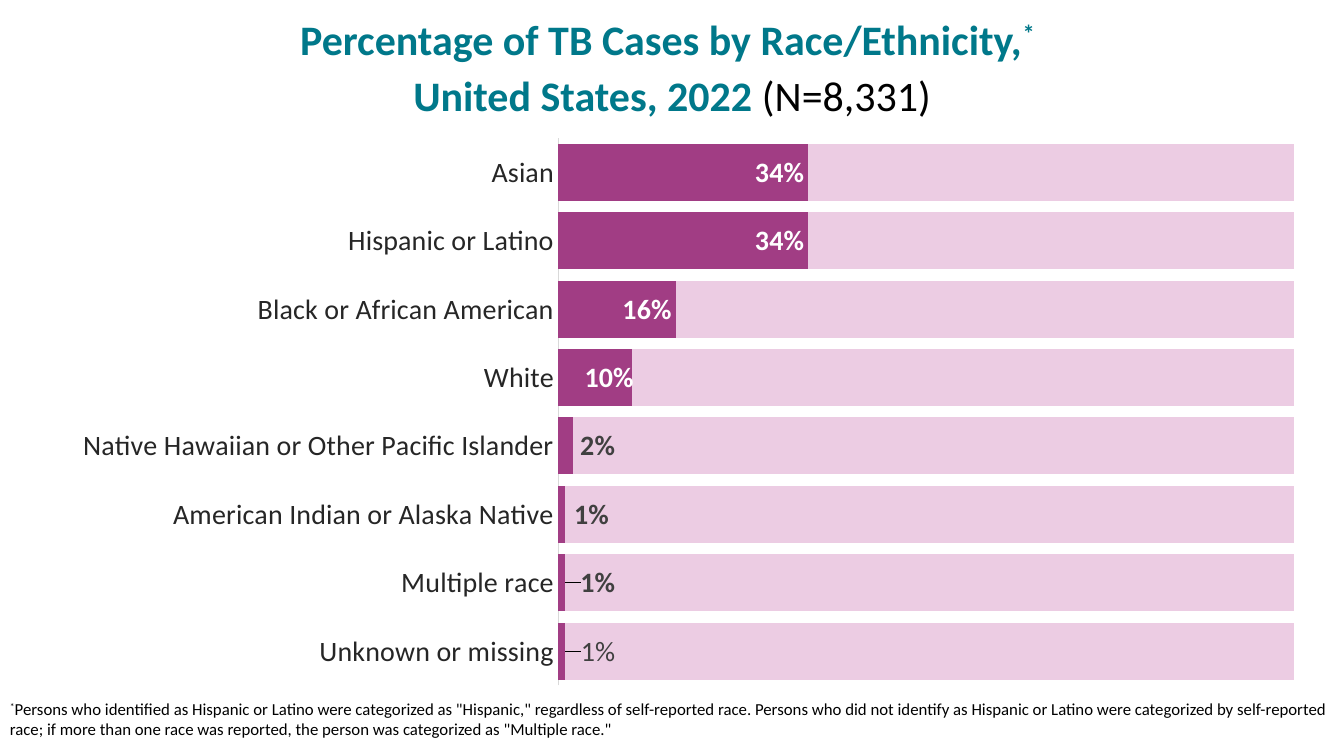
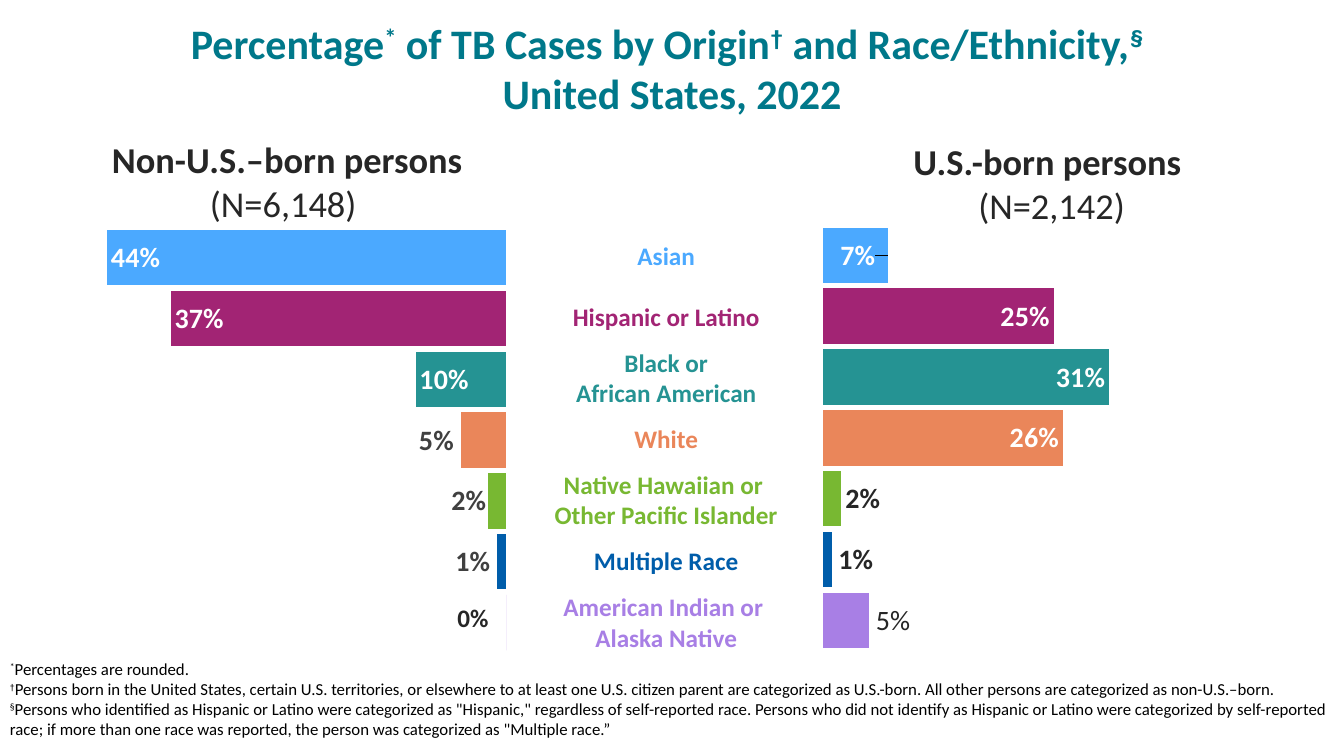
from itertools import groupby

from pptx import Presentation
from pptx.chart.data import CategoryChartData
from pptx.dml.color import RGBColor
from pptx.enum.chart import XL_CHART_TYPE, XL_LABEL_POSITION, XL_TICK_LABEL_POSITION, XL_TICK_MARK
from pptx.enum.text import MSO_ANCHOR, MSO_AUTO_SIZE, PP_ALIGN
from pptx.oxml import parse_xml
from pptx.oxml.ns import nsdecls
from pptx.util import Cm, Pt

TEAL = RGBColor(0x00, 0x78, 0x8A)
BLACK = RGBColor(0, 0, 0)
WHITE = RGBColor(255, 255, 255)
INK = RGBColor(0x26, 0x26, 0x26)
GRAY = RGBColor(0x40, 0x40, 0x40)
RULE = RGBColor(0xD9, 0xD9, 0xD9)
PLUM = RGBColor(0xA1, 0x3D, 0x84)
PINK = RGBColor(0xEC, 0xCC, 0xE3)

RACES = [
    ("Asian", RGBColor(0x4B, 0xA9, 0xFF)),
    ("Hispanic or Latino", RGBColor(0xA2, 0x24, 0x74)),
    ("Black or\nAfrican American", RGBColor(0x25, 0x93, 0x93)),
    ("White", RGBColor(0xEA, 0x86, 0x5A)),
    ("Native Hawaiian or \nOther Pacific Islander", RGBColor(0x78, 0xB8, 0x32)),
    ("Multiple Race", RGBColor(0x00, 0x5D, 0xAA)),
    ("American Indian or \nAlaska Native", RGBColor(0xA8, 0x7F, 0xE5)),
]
TITLE = {"name": "Calibri", "size": Pt(30), "bold": True}
HEAD = {"name": "Calibri", "size": Pt(26), "bold": True}
LABEL = {"name": "Calibri", "size": Pt(20), "bold": True}
RACE = {"name": "Calibri", "size": Pt(18), "bold": True}
NOTE = {"name": "Calibri", "size": Pt(12), "bold": False}
AXIS = {"name": "Calibri", "size": Pt(20), "bold": False}
BASE = {"name": "Calibri", "size": Pt(10)}
MARKS = "*†§"
PERSONS = (
    'Persons who identified as Hispanic or Latino were categorized as "Hispanic," '
    "regardless of self-reported race. Persons who did not identify as Hispanic or Latino "
    "were categorized by self-reported race; if more than one race was reported, "
    'the person was categorized as "Multiple race.'
)


def apply(item, form):
    for key, value in form.items():
        setattr(item, key, value)


def style(font, form, color):
    apply(font, form)
    font.color.rgb = color


def write(para, text, form, color, karla="†§"):
    for raised, chars in groupby(text, lambda c: c in MARKS):
        part = "".join(chars)
        run = para.add_run()
        run.text = part
        style(run.font, form, color)
        if raised:
            run.font._element.set("baseline", "30000")
            if part in karla:
                run.font.name = "Karla"


def add_title(slide, top, lines, gap=None):
    title = slide.shapes.title
    apply(title, {"left": Cm(1.7), "top": Cm(top), "width": Cm(30.48), "height": Cm(2.69)})
    frame = title.text_frame
    apply(frame, {"word_wrap": True, "auto_size": MSO_AUTO_SIZE.NONE, "vertical_anchor": MSO_ANCHOR.BOTTOM})
    para = frame.paragraphs[0]
    apply(para, {"alignment": PP_ALIGN.CENTER, "line_spacing": gap})
    for row, text in enumerate(lines):
        if row:
            para.add_line_break()
        write(para, text, TITLE, TEAL)
    return para


def add_text(slide, box, lines, align=PP_ALIGN.LEFT, anchor=MSO_ANCHOR.TOP, wrap=True):
    frame = slide.shapes.add_textbox(*map(Cm, box)).text_frame
    apply(frame, {"word_wrap": wrap, "vertical_anchor": anchor})
    for row, (text, form, color) in enumerate(lines):
        para = frame.add_paragraph() if row else frame.paragraphs[0]
        para.alignment = align
        write(para, text, form, color, "†")


def add_notes(slide, top, height, notes):
    add_text(slide, (0, top, 33.87, height), [(note, NOTE, BLACK) for note in notes])


def layout(x, y, w=None, h=None):
    sized = w is not None
    inner = '<c:layoutTarget val="inner"/><c:xMode val="edge"/><c:yMode val="edge"/>' if sized else ""
    size = f'<c:w val="{w}"/><c:h val="{h}"/>' if sized else ""
    return parse_xml(
        f'<c:layout {nsdecls("c")}><c:manualLayout>{inner}'
        f'<c:x val="{x}"/><c:y val="{y}"/>{size}</c:manualLayout></c:layout>'
    )


def add_chart(slide, box, kind, cats, rows, form, plot, area, top):
    data = CategoryChartData(number_format=form)
    data.categories = cats
    for index, values in enumerate(rows, 1):
        data.add_series(f"Series {index}", values)
    chart = slide.shapes.add_chart(kind, *map(Cm, box), data).chart
    apply(chart, {"has_legend": False, "has_title": False})
    style(chart.font, BASE, BLACK)
    apply(chart.plots[0], {"vary_by_categories": False, **plot})
    apply(chart.value_axis, {
        "minimum_scale": 0, "maximum_scale": top, "major_unit": top / 5,
        "has_major_gridlines": False, "visible": False,
    })
    space = chart._chartSpace.xpath("c:chart/c:plotArea")[0]
    for old in space.xpath("c:layout"):
        space.remove(old)
    space.insert(0, layout(*area))
    return chart


def paint(item, color):
    item.format.fill.solid()
    item.format.fill.fore_color.rgb = color


def add_labels(series, limit, color, outside, plain, shifts):
    for index, value in enumerate(series.values):
        if not value:
            continue
        label = series.points[index].data_label
        inside = value > limit
        style(label.font, {**LABEL, "bold": index != plain}, WHITE if inside else color)
        label.position = XL_LABEL_POSITION.INSIDE_END if inside else outside
        if index in shifts:
            node = series._element.xpath(f'c:dLbls/c:dLbl[c:idx/@val="{index}"]')[0]
            node.insert(1, layout(shifts[index], 0))
    series.data_labels.show_value = False


def race_chart(slide, box):
    cats = [
        "Asian", "Hispanic or Latino", "Black or African American", "White",
        "Native Hawaiian or Other Pacific Islander", "American Indian or Alaska Native",
        "Multiple race", "Unknown or missing",
    ]
    cases = [34, 34, 16, 10, 2, 1, 1, 1]
    rest = [66, 66, 84, 90, 98, 99, 99, 99]
    chart = add_chart(
        slide, box, XL_CHART_TYPE.BAR_STACKED_100, cats, [cases, rest], '0"%"',
        {"gap_width": 20, "overlap": 100}, (0.409, 0.038, 0.586, 0.933), 1,
    )
    axis = chart.category_axis
    apply(axis, {
        "reverse_order": True, "major_tick_mark": XL_TICK_MARK.NONE,
        "minor_tick_mark": XL_TICK_MARK.NONE, "has_major_gridlines": False,
        "tick_label_position": XL_TICK_LABEL_POSITION.NEXT_TO_AXIS,
    })
    style(axis.tick_labels.font, AXIS, INK)
    axis.format.line.width = Pt(0.75)
    axis.format.line.color.rgb = RULE
    for series, color in zip(chart.plots[0].series, (PLUM, PINK)):
        paint(series, color)
    add_labels(
        chart.plots[0].series[0], 5, GRAY, XL_LABEL_POSITION.INSIDE_END,
        7, {3: 0.005, 4: 0.037, 5: 0.038, 6: 0.043, 7: 0.043},
    )


def birth_chart(slide, box, values, area, color, shifts, plain=None, mirror=False):
    cats = [str(number) for number in range(1, len(RACES) + 1)]
    chart = add_chart(
        slide, box, XL_CHART_TYPE.BAR_CLUSTERED, cats, [values], "0%",
        {"gap_width": 10}, area, 0.5,
    )
    chart.category_axis.visible = False
    chart.value_axis.reverse_order = mirror
    series = chart.plots[0].series[0]
    paint(series, RACES[5][1])
    for index, (name, tint) in enumerate(reversed(RACES)):
        paint(series.points[index], tint)
    add_labels(series, 0.05, color, XL_LABEL_POSITION.OUTSIDE_END, plain, shifts)


def race_names(slide, left, middle, width, pitch):
    tall = 1.8
    for row, (name, color) in enumerate(RACES):
        box = (left, middle + row * pitch - tall / 2, width, tall)
        lines = [(line, RACE, color) for line in name.split("\n")]
        add_text(slide, box, lines, PP_ALIGN.CENTER, MSO_ANCHOR.MIDDLE)


def birth_head(slide, box, name, count):
    lines = [(name, HEAD, INK), (count, {**HEAD, "bold": False}, INK)]
    add_text(slide, box, lines, PP_ALIGN.CENTER, wrap=False)


def race_slide(slide):
    para = add_title(
        slide, 0.46,
        ["Percentage of TB Cases by Race/Ethnicity,* ", "United States, 2022 "], Pt(40),
    )
    write(para, "(N=8,331)", {**TITLE, "bold": False}, BLACK)
    race_chart(slide, (1.11, 2.92, 31.67, 14.78))
    add_notes(slide, 17.48, 1.19, ["*" + PERSONS + '"'])


def birth_slide(slide):
    add_title(slide, 0.41, [
        "Percentage* of TB Cases by Origin† and Race/Ethnicity,§ ", "United States, 2022",
    ])
    add_notes(slide, 16.47, 2.24, [
        "*Percentages are rounded.",
        "†Persons born in the United States, certain U.S. territories, or elsewhere to at least "
        "one U.S. citizen parent are categorized as U.S.-born. All other persons are categorized "
        "as non-U.S.–born.",
        "§" + PERSONS + "”",
    ])
    birth_head(slide, (2.42, 3.33, 9.65, 2.54), "Non-U.S.–born persons", "(N=6,148) ")
    birth_head(slide, (22.63, 3.38, 7.75, 2.54), "U.S.-born persons ", "(N=2,142)")
    birth_chart(
        slide, (19.71, 5.31, 13.89, 11.15), [0.05, 0.01, 0.02, 0.26, 0.31, 0.25, 0.07],
        (0.074, 0.032, 0.838, 0.963), INK, {0: 0.005, 1: 0.004, 6: -0.015}, plain=0,
    )
    race_names(slide, 12.47, 6.43, 8.64, 1.54)
    birth_chart(
        slide, (0.26, 5.31, 14.4, 11.15), [0, 0.01, 0.02, 0.05, 0.1, 0.37, 0.44],
        (0.074, 0.037, 0.794, 0.963), GRAY, {1: -0.005, 2: 0.004, 3: -0.005}, mirror=True,
    )
    add_text(slide, (11.28, 15.05, 1.3, 1.02), [("0%", RACE, INK)], wrap=False)


def main():
    deck = Presentation()
    apply(deck, {"slide_width": Cm(33.87), "slide_height": Cm(19.05)})
    for build in (race_slide, birth_slide):
        build(deck.slides.add_slide(deck.slide_layouts[5]))
    deck.save("out.pptx")


if __name__ == "__main__":
    main()
